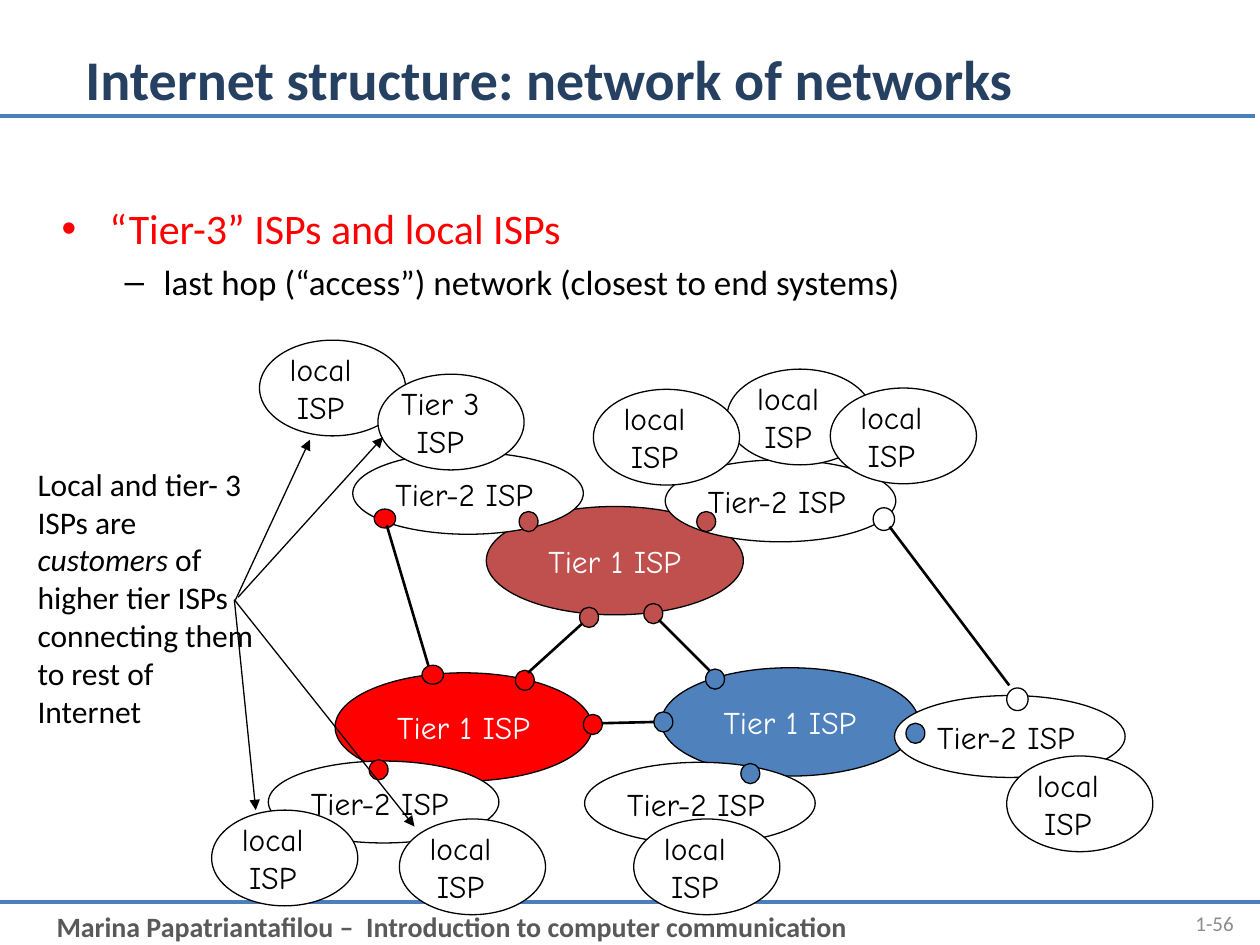
from lxml.etree import SubElement
from pptx import Presentation
from pptx.dml.color import RGBColor
from pptx.enum.shapes import MSO_CONNECTOR, MSO_SHAPE
from pptx.enum.text import MSO_ANCHOR, PP_ALIGN
from pptx.oxml.ns import qn
from pptx.util import Inches, Pt

SLIDE_WIDTH, SLIDE_HEIGHT = Inches(10), Inches(7.5)
COLUMNS, ROWS = 100, 75

BLACK = RGBColor(0x00, 0x00, 0x00)
WHITE = RGBColor(0xFF, 0xFF, 0xFF)
RED = RGBColor(0xFF, 0x00, 0x00)
BRICK = RGBColor(0xC0, 0x50, 0x4D)
BLUE = RGBColor(0x4F, 0x81, 0xBD)
RULE_BLUE = RGBColor(0x4B, 0x7E, 0xBC)
NAVY = RGBColor(0x25, 0x40, 0x61)
DARK_GREY = RGBColor(0x59, 0x59, 0x59)
LIGHT_GREY = RGBColor(0x8C, 0x8C, 0x8C)

BODY_FONT, DIAGRAM_FONT = "Calibri", "Comic Neue"
TIER_1_SIZE = (20.4, 8.6)
TIER_2_SIZE = (18.3, 6.5)
LOCAL_SIZE = (11.6, 7.6)
DOT_SIZE = (1.5, 1.6)
WIDE_DOT_SIZE = (1.7, 1.5)
ACCESS_DOT_SIZE = (1.7, 1.8)


def column(number):
    return round(SLIDE_WIDTH * number / COLUMNS)


def row(number):
    return round(SLIDE_HEIGHT * number / ROWS)


def place(left, top, width, height):
    return column(left), row(top), column(width), row(height)


def format_paragraph(paragraph, size, color, font=BODY_FONT, bold=False, align=PP_ALIGN.LEFT):
    paragraph.alignment = align
    for run in paragraph.runs:
        run.font.name = font
        run.font.size = Pt(size)
        run.font.bold = bold
        run.font.color.rgb = color


def add_text(slide, box, text, size, color, anchor=MSO_ANCHOR.TOP, **style):
    shape = slide.shapes.add_textbox(*place(*box))
    text_frame = shape.text_frame
    text_frame.word_wrap = True
    text_frame.vertical_anchor = anchor
    text_frame.text = text
    for paragraph in text_frame.paragraphs:
        format_paragraph(paragraph, size, color, **style)
    return text_frame


def add_ellipse(slide, position, size, fill):
    shape = slide.shapes.add_shape(MSO_SHAPE.OVAL, *place(*position, *size))
    shape.shadow.inherit = False
    shape.fill.solid()
    shape.fill.fore_color.rgb = fill
    shape.line.color.rgb = BLACK
    shape.line.width = Pt(0.75)
    return shape


def add_line(slide, start, end, width=1.5, color=BLACK, arrow=False):
    connector = slide.shapes.add_connector(
        MSO_CONNECTOR.STRAIGHT, column(start[0]), row(start[1]), column(end[0]), row(end[1]))
    connector.line.color.rgb = color
    connector.line.width = Pt(width)
    if arrow:
        SubElement(connector.line._get_or_add_ln(), qn("a:tailEnd"), type="triangle")
    SubElement(connector._element.spPr, qn("a:effectLst"))


def add_tier_1(slide, position, fill):
    text_frame = add_ellipse(slide, position, TIER_1_SIZE, fill).text_frame
    text_frame.word_wrap = False
    text_frame.vertical_anchor = MSO_ANCHOR.MIDDLE
    text_frame.text = "Tier 1 ISP"
    format_paragraph(text_frame.paragraphs[0], 18, WHITE, DIAGRAM_FONT, align=PP_ALIGN.CENTER)


def add_tier_2(slide, position, dot, dot_fill):
    left, top = position
    add_ellipse(slide, position, TIER_2_SIZE, WHITE)
    add_text(slide, (left + 2.4, top + 1.3, 14.7, 4), "Tier-2 ISP", 18, BLACK, font=DIAGRAM_FONT)
    add_ellipse(slide, dot, DOT_SIZE, dot_fill)


def add_access_isp(slide, position, name="local", offset=1.2, width=7.3):
    left, top = position
    add_ellipse(slide, position, LOCAL_SIZE, WHITE)
    add_text(slide, (left + offset, top + 0.3, width, 7), f"{name}\nISP", 18, BLACK,
             font=DIAGRAM_FONT, align=PP_ALIGN.CENTER)


def add_bullet(paragraph, mark, margin, hanging, level):
    properties = paragraph._p.get_or_add_pPr()
    properties.set("marL", str(column(margin)))
    properties.set("indent", str(-column(hanging)))
    SubElement(properties, qn("a:buFont"), typeface="Arial")
    SubElement(properties, qn("a:buChar"), char=mark)
    paragraph.level = level


def add_frame(slide):
    add_line(slide, (0, 71.6), (100, 71.6), 2.25, RULE_BLUE)
    add_text(slide, (3.5, 71.7, 92.5, 3.7),
             "Marina Papatriantafilou –  Introduction to computer communication",
             16, DARK_GREY, bold=True)
    add_line(slide, (-0.4, 9.2), (99.6, 9.2), 2.25, RULE_BLUE)
    add_text(slide, (90.9, 71.3, 8, 4), "1-56", 12, LIGHT_GREY, MSO_ANCHOR.MIDDLE,
             align=PP_ALIGN.RIGHT)
    add_text(slide, (5.8, 2.5, 88.5, 7.4), "Internet structure: network of networks",
             32, NAVY, MSO_ANCHOR.MIDDLE, bold=True)


def add_body(slide):
    text_frame = add_text(
        slide, (3.9, 15.6, 92.3, 10),
        "“Tier-3” ISPs and local ISPs\nlast hop (“access”) network (closest to end systems)",
        20, BLACK)
    topic, detail = text_frame.paragraphs
    format_paragraph(topic, 24, RED)
    topic.space_before, detail.space_before = Pt(4.8), Pt(4)
    add_bullet(topic, "•", 3.8, 3.8, 0)
    add_bullet(detail, "–", 8.1, 3.1, 1)


def add_backbone(slide):
    for position, fill in (((26.6, 53.4), RED), ((38.6, 40.2), BRICK), ((52.5, 53), BLUE)):
        add_tier_1(slide, position, fill)
    for position, fill in (((56, 53.1), BLUE), ((51.1, 47.9), BRICK), ((46, 48.2), BRICK),
                           ((40.9, 53.2), RED), ((46.3, 56.7), RED), ((51.9, 56.5), BLUE)):
        add_ellipse(slide, position, DOT_SIZE, fill)
    for start, end in (((47.8, 57.4), (51.9, 57.3)), ((52.3, 49.2), (56.3, 53.2)),
                       ((41.9, 53.4), (46.2, 49.5))):
        add_line(slide, start, end)


def add_regional_networks(slide):
    for position, dot, fill in (((52.8, 36.5), (55.3, 40.6), BRICK),
                                ((28, 35.9), (41.2, 40.6), BRICK),
                                ((21.3, 60.4), (29.3, 60.3), RED),
                                ((46.4, 60.5), (58.8, 60.6), BLUE),
                                ((71, 55.2), (71.9, 57.4), BLUE)):
        add_tier_2(slide, position, dot, fill)
    add_ellipse(slide, (29.7, 40.4), WIDE_DOT_SIZE, RED)
    add_line(slide, (30.7, 41.7), (34.2, 53.5))
    add_ellipse(slide, (33.5, 52.8), WIDE_DOT_SIZE, RED)
    for position in ((69.3, 40.3), (79.9, 54.6)):
        add_ellipse(slide, position, ACCESS_DOT_SIZE, WHITE)
    add_line(slide, (70.6, 41.8), (80.1, 54.4))


def add_access_networks(slide):
    for position in ((57.7, 29.3), (47.1, 30.9), (65.9, 30.8), (16.8, 64.3), (20.6, 27)):
        add_access_isp(slide, position)
    add_access_isp(slide, (30, 29.7), "Tier 3", 0.3, 9.3)
    for position in ((31.7, 65), (50.3, 65), (79.9, 60)):
        add_access_isp(slide, position)


def add_customer_note(slide):
    text_frame = add_text(
        slide, (2, 36.4, 19.7, 22.2),
        "Local and tier- 3 ISPs are \nhigher tier ISPs\nconnecting them to rest of Internet",
        18, BLACK)
    opening = text_frame.paragraphs[0]
    for text in ("customers", " of"):
        opening.add_run().text = text
    format_paragraph(opening, 18, BLACK)
    opening.runs[1].font.italic = True
    for start, end in (((18.6, 47.8), (24.6, 34.9)), ((18.9, 47.4), (30.4, 34.7)),
                       ((18.6, 47.6), (20.3, 64.3)), ((18.6, 47.6), (32.9, 65.6))):
        add_line(slide, start, end, 0.75, arrow=True)


def main():
    presentation = Presentation()
    presentation.slide_width, presentation.slide_height = SLIDE_WIDTH, SLIDE_HEIGHT
    slide = presentation.slides.add_slide(presentation.slide_layouts[6])
    add_frame(slide)
    add_body(slide)
    add_backbone(slide)
    add_regional_networks(slide)
    add_access_networks(slide)
    add_customer_note(slide)
    presentation.save("out.pptx")


if __name__ == "__main__":
    main()
